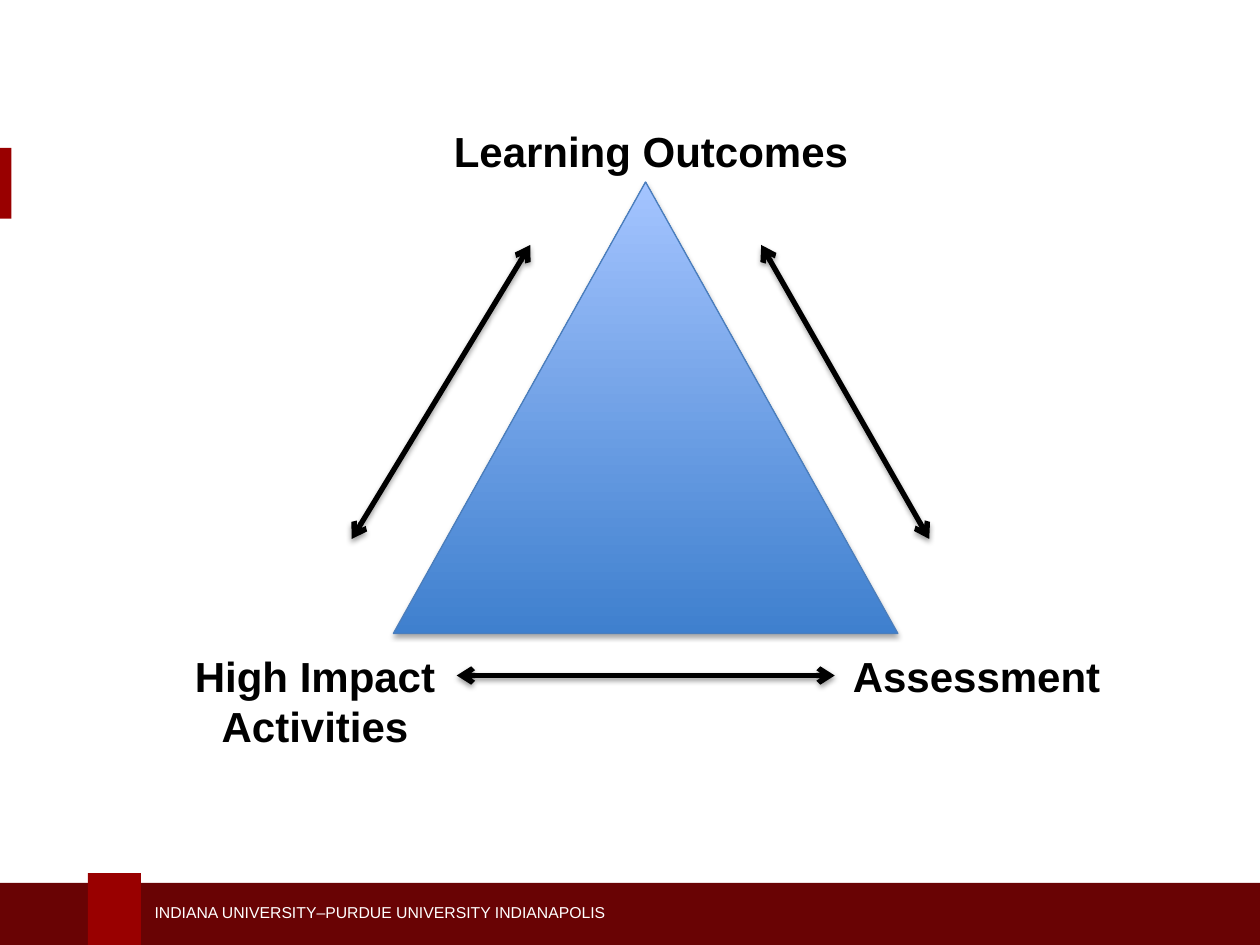
from dataclasses import dataclass

import pptx
import pptx.dml.color
import pptx.enum.dml
import pptx.enum.shapes
import pptx.enum.text
import pptx.oxml
import pptx.oxml.ns
import pptx.util

Pt = pptx.util.Pt
SHAPE = pptx.enum.shapes.MSO_SHAPE
ALIGN = pptx.enum.text.PP_ALIGN
ANCHOR = pptx.enum.text.MSO_ANCHOR

LABEL_FORMAT = {"name": "Arial", "size": Pt(24), "bold": True}
FOOTER_FORMAT = {"name": "Arial", "size": Pt(9), "bold": False}


@dataclass
class Box:
    left: float
    top: float
    width: float
    height: float

    def lengths(self) -> list:
        return [Pt(v) for v in (self.left, self.top, self.width, self.height)]


@dataclass
class Block:
    box: Box
    color: str


@dataclass
class Label:
    box: Box
    lines: list[str]


@dataclass
class Arrow:
    start: tuple[float, float]
    end: tuple[float, float]


def rgb(color: str) -> pptx.dml.color.RGBColor:
    return pptx.dml.color.RGBColor.from_string(color)


def add_shadow(item, opacity: int, distance: float) -> None:
    """Append a soft black shadow that falls straight down."""
    item._element.spPr.append(pptx.oxml.parse_xml(
        f'<a:effectLst {pptx.oxml.ns.nsdecls("a")}>'
        f'<a:outerShdw blurRad="{Pt(3.1)}" dist="{Pt(distance)}" dir="5400000" rotWithShape="0">'
        f'<a:srgbClr val="000000"><a:alpha val="{opacity * 1000}"/></a:srgbClr>'
        '</a:outerShdw></a:effectLst>'))


def draw_block(slide, block: Block) -> None:
    rectangle = slide.shapes.add_shape(SHAPE.RECTANGLE, *block.box.lengths())
    rectangle.shadow.inherit = False
    rectangle.fill.solid()
    rectangle.fill.fore_color.rgb = rgb(block.color)
    rectangle.line.fill.background()


def draw_text(slide, label: Label, formats: dict, color: str, align, anchor) -> None:
    frame = slide.shapes.add_textbox(*label.box.lengths()).text_frame
    frame.word_wrap = True
    frame.vertical_anchor = anchor
    frame.text = "\n".join(label.lines)
    for paragraph in frame.paragraphs:
        paragraph.alignment = align
        for key, value in formats.items():
            setattr(paragraph.font, key, value)
        paragraph.font.color.rgb = rgb(color)


def draw_triangle(slide, box: Box) -> None:
    triangle = slide.shapes.add_shape(SHAPE.ISOSCELES_TRIANGLE, *box.lengths())
    triangle.fill.gradient()
    triangle.fill.gradient_angle = 90
    for stop, color in zip(triangle.fill.gradient_stops, ("3F80CE", "A4C4FF")):
        stop.color.rgb = rgb(color)
    for position, stop in enumerate(triangle.fill.gradient_stops):
        stop.position = position
    triangle.line.color.rgb = rgb("4B7EBC")
    triangle.line.width = Pt(0.75)
    add_shadow(triangle, 35, 1.8)


def draw_arrow(slide, arrow: Arrow) -> None:
    connector = slide.shapes.add_connector(
        pptx.enum.shapes.MSO_CONNECTOR.STRAIGHT,
        *[Pt(v) for v in arrow.start + arrow.end])
    connector.line.color.rgb = rgb("000000")
    connector.line.width = Pt(3)
    outline = connector.line._get_or_add_ln()
    for end in ("headEnd", "tailEnd"):
        outline.append(pptx.oxml.parse_xml(
            f'<a:{end} {pptx.oxml.ns.nsdecls("a")} type="arrow"/>'))
    add_shadow(connector, 38, 1.6)


# Side tab, footer band and footer square
BLOCKS = [
    Block(Box(0, 84.5, 6.5, 40.5), "990000"),
    Block(Box(-2, 504.5, 726.5, 36), "690304"),
    Block(Box(50.2, 499, 30.3, 41.5), "990000"),
]
FOOTER = Label(Box(81.2, 512, 284.5, 18),
               ["INDIANA UNIVERSITY–PURDUE UNIVERSITY INDIANAPOLIS"])

# Triangle, its corner labels and the arrows along its sides
TRIANGLE = Box(224.75, 104, 288.3, 258)
CORNERS = [
    Label(Box(225, 68, 294, 36), ["Learning Outcomes"]),
    Label(Box(99, 368, 162, 65.5), ["High Impact", "Activities"]),
    Label(Box(477, 368, 162, 36), ["Assessment"]),
]
ARROWS = [
    Arrow((435, 140), (531, 308)),
    Arrow((303, 140), (201, 308)),
    Arrow((261, 386), (477, 386)),
]


def main() -> None:
    deck = pptx.Presentation()
    deck.slide_width, deck.slide_height = Pt(720), Pt(540)
    slide = deck.slides.add_slide(deck.slide_layouts[6])

    # Frame
    for block in BLOCKS:
        draw_block(slide, block)
    draw_text(slide, FOOTER, FOOTER_FORMAT, "FFFFFF", ALIGN.LEFT, ANCHOR.MIDDLE)

    # Diagram
    draw_triangle(slide, TRIANGLE)
    for corner in CORNERS:
        draw_text(slide, corner, LABEL_FORMAT, "000000", ALIGN.CENTER, ANCHOR.TOP)
    for arrow in ARROWS:
        draw_arrow(slide, arrow)

    deck.save("out.pptx")


if __name__ == "__main__":
    main()
